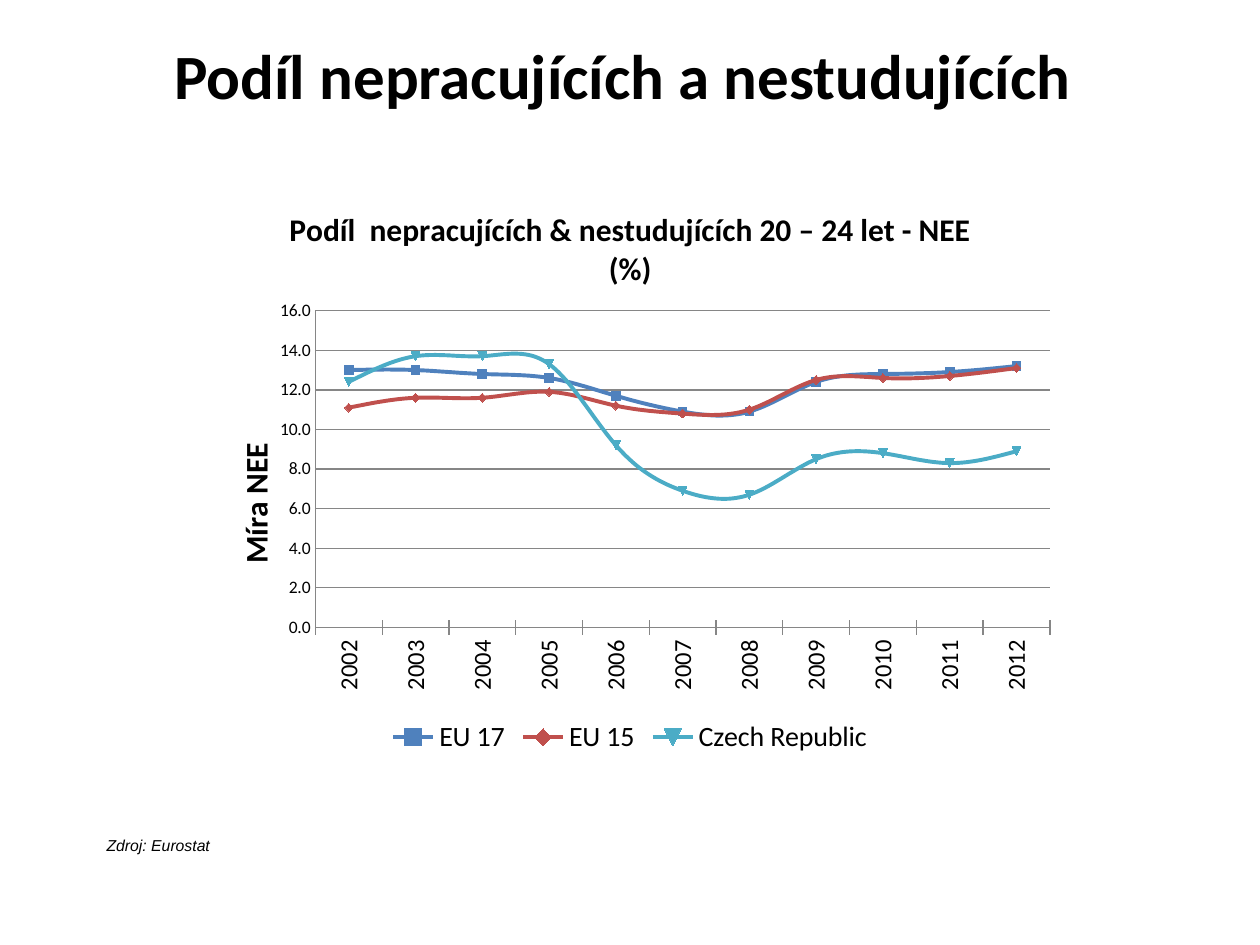
from lxml.etree import SubElement
from pptx import Presentation
from pptx.chart.data import CategoryChartData
from pptx.dml.color import RGBColor
from pptx.enum.chart import XL_CHART_TYPE, XL_LEGEND_POSITION, XL_TICK_MARK
from pptx.enum.text import MSO_ANCHOR, PP_ALIGN
from pptx.oxml.ns import qn
from pptx.util import Cm, Pt

BLACK = "000000"
GREY = "868686"
YEARS = [str(year) for year in range(2002, 2013)]
SERIES = [
    ("EU 17", "4F81BD",
     [13, 13, 12.8, 12.6, 11.7, 10.9, 10.9, 12.4, 12.8, 12.9, 13.2]),
    ("EU 15", "C0504D",
     [11.1, 11.6, 11.6, 11.9, 11.2, 10.8, 11, 12.5, 12.6, 12.7, 13.1]),
    ("Czech Republic", "4BACC6",
     [12.4, 13.7, 13.7, 13.3, 9.2, 6.9, 6.7, 8.5, 8.8, 8.3, 8.9]),
]


def color(code):
    return RGBColor.from_string(code)


def style(font, size, name="Calibri", bold=False, italic=False):
    font.size, font.name = Pt(size), name
    font.bold, font.italic = bold, italic
    font.color.rgb = color(BLACK)


def add_text(slide, text, box, size, align=PP_ALIGN.LEFT, **look):
    frame = slide.shapes.add_textbox(*map(Cm, box)).text_frame
    frame.word_wrap = True
    frame.vertical_anchor = MSO_ANCHOR.MIDDLE
    line = frame.paragraphs[0]
    line.text, line.alignment = text, align
    style(line.font, size, **look)


def set_title(owner, text):
    """Give a chart or an axis a bold title."""
    frame = (owner.chart_title if hasattr(owner, "chart_title")
             else owner.axis_title).text_frame
    frame.text = text
    style(frame.paragraphs[0].font, 18, bold=True)


def place(node, index, **parts):
    """Put a manual layout, in shares of the chart, into a chart part."""
    for old in node.findall(qn("c:layout")):
        node.remove(old)
    layout = SubElement(node, qn("c:layout"))
    node.insert(index, layout)
    manual = SubElement(layout, qn("c:manualLayout"))
    for key, value in parts.items():
        SubElement(manual, qn(f"c:{key}")).set("val", str(value))


def style_axes(chart):
    years, rate = chart.category_axis, chart.value_axis
    years.major_tick_mark = XL_TICK_MARK.CROSS
    style(years.tick_labels.font, 14)

    rate.minimum_scale, rate.maximum_scale, rate.major_unit = 0, 16, 2
    rate.major_tick_mark = XL_TICK_MARK.NONE
    rate.has_major_gridlines = True
    rate.tick_labels.number_format = "#,##0.0"
    rate.tick_labels.number_format_is_linked = False
    style(rate.tick_labels.font, 10)
    set_title(rate, "Míra NEE")

    for part in (years, rate, rate.major_gridlines):
        part.format.line.color.rgb = color(GREY)
        part.format.line.width = Pt(0.75)


def tune_xml(chart):
    """Turn the labels upright and fix the places of plot and axis title."""
    root = chart.element
    root.xpath(".//c:catAx/c:txPr/a:bodyPr")[0].set("rot", "-5400000")
    title = root.xpath(".//c:valAx/c:title")[0]
    body = title.xpath("./c:tx/c:rich/a:bodyPr")[0]
    body.set("rot", "-5400000")
    body.set("vert", "horz")
    place(title, 1, xMode="edge", yMode="edge", x=0.04, y=0.44)
    place(root.xpath(".//c:plotArea")[0], 0, layoutTarget="inner",
          xMode="edge", yMode="edge", x=0.14, y=0.22, w=0.84, h=0.55)
    axis = root.xpath(".//c:valAx")[0]
    if axis.find(qn("c:crossBetween")) is None:
        between = SubElement(axis, qn("c:crossBetween"))
        between.set("val", "between")
        axis.find(qn("c:crosses")).addnext(between)


def add_lines(slide, box):
    data = CategoryChartData(number_format="0.0")
    data.categories = YEARS
    for name, _, values in SERIES:
        data.add_series(name, values)
    chart = slide.shapes.add_chart(
        XL_CHART_TYPE.LINE_MARKERS, *map(Cm, box), data).chart
    style(chart.font, 10)
    set_title(chart, "Podíl  nepracujících & nestudujících 20 – 24 let - NEE (%)")
    chart.has_legend = True
    chart.legend.position = XL_LEGEND_POSITION.BOTTOM
    chart.legend.include_in_layout = False
    style(chart.legend.font, 16)

    plot = chart.plots[0]
    plot.vary_by_categories = False
    for line, (_, code, _) in zip(plot.series, SERIES):
        line.smooth = True
        line.format.line.color.rgb = color(code)
        line.format.line.width = Pt(2.25)
        mark = line.marker.format
        mark.fill.solid()
        mark.fill.fore_color.rgb = color(code)
        mark.line.color.rgb = color(code)
    style_axes(chart)
    tune_xml(chart)


def main():
    deck = Presentation()
    deck.slide_width, deck.slide_height = Cm(25.4), Cm(19.05)
    slide = deck.slides.add_slide(deck.slide_layouts[6])
    add_text(slide, "Podíl nepracujících a nestudujících ",
             (1.27, 0.64, 22.86, 1.7), 36, PP_ALIGN.CENTER, bold=True)
    add_text(slide, "Zdroj: Eurostat", (1.9, 16.71, 21.59, 0.64), 9,
             name="Arial", italic=True)
    add_lines(slide, (3.89, 3.71, 17.63, 11.61))
    deck.save("out.pptx")


if __name__ == "__main__":
    main()
